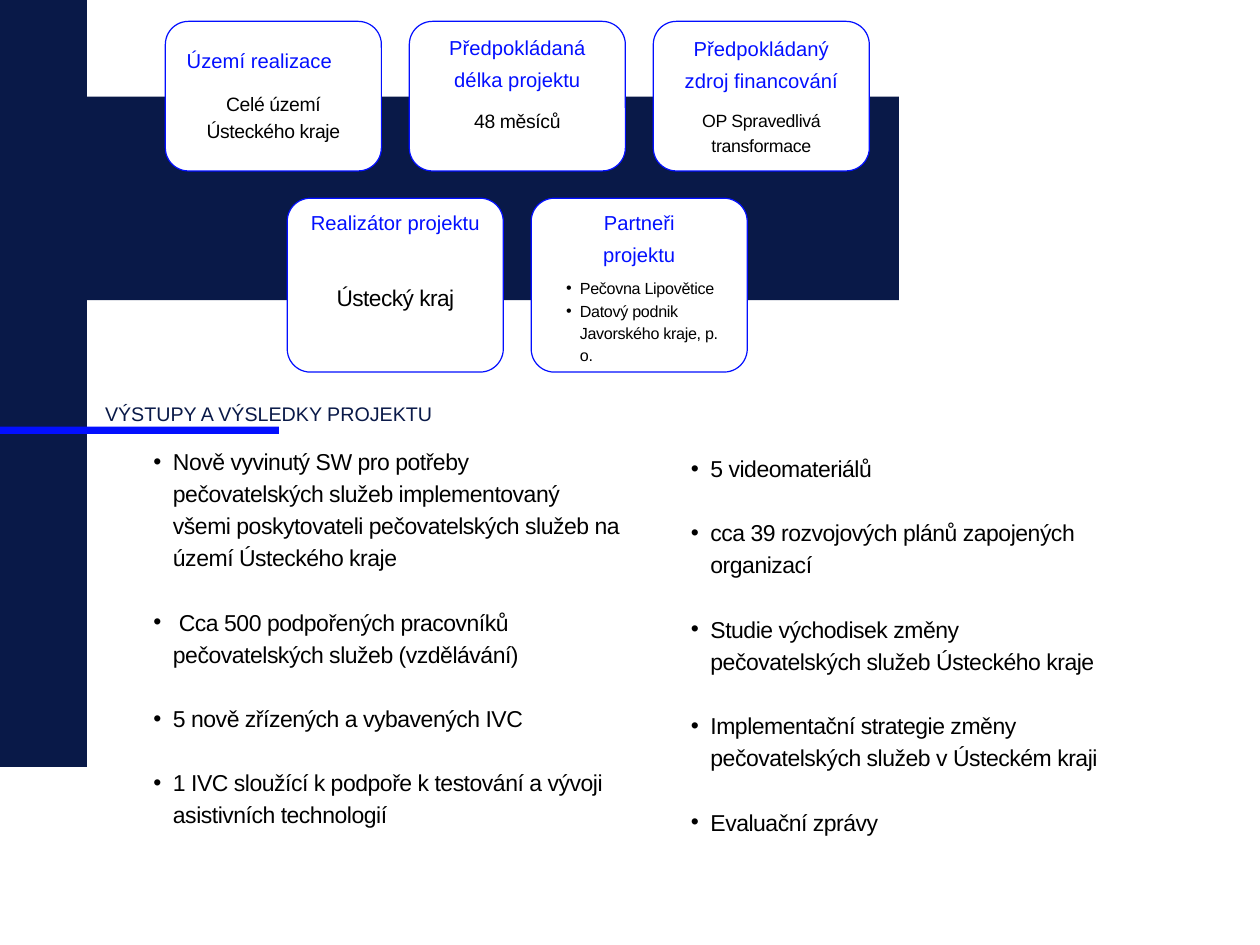
from pptx import Presentation
from pptx.util import Pt
from pptx.dml.color import RGBColor
from pptx.enum.shapes import MSO_SHAPE as Shape
from pptx.enum.text import MSO_ANCHOR as Anchor, MSO_AUTO_SIZE as Auto, PP_ALIGN as Align
from pptx.oxml.ns import qn
from lxml.etree import SubElement

NAVY = RGBColor(0x09, 0x19, 0x48)
BLUE = RGBColor(0x03, 0x0F, 0xFF)
BLACK = RGBColor(0, 0, 0)
WHITE = RGBColor(255, 255, 255)

TITLE = "VÝSTUPY A VÝSLEDKY PROJEKTU"

# Text styles: size, line height, letter spacing, bullet indent, gap between items
HEAD = dict(size=12.3, line=19.6, color=BLUE, align=Align.CENTER)
LEFT = {**HEAD, "align": Align.LEFT}
BODY = dict(size=11.8, line=16.5, spc=-0.2, align=Align.CENTER)
FUND = dict(size=10.8, line=15.1, spc=-0.2, align=Align.CENTER)
OWNER = dict(size=13.8, line=19.3, spc=-0.3, align=Align.CENTER)
PARTNER = dict(size=9.8, line=13.7, spc=-0.2, indent=(16.6, 8.4))
RESULT = dict(size=14, line=19.6, spc=-0.3, indent=(24, 12), gap=19.6)

# Rows of cards: left, top, height, cards; each card holds (top, lines, style)
ROWS = [
    (100.8, 13, 91.2, [
        [(24.5, ["Území realizace"], LEFT),
         (54, ["Celé území", "Ústeckého kraje"], BODY)],
        [(16.7, ["Předpokládaná délka projektu"], HEAD),
         (64, ["48 měsíců"], BODY)],
        [(17.2, ["Předpokládaný zdroj financování"], HEAD),
         (65, ["OP Spravedlivá transformace"], FUND)],
    ]),
    (175.1, 120.8, 106, [
        [(123.2, ["Realizátor projektu"], HEAD),
         (170, ["Ústecký kraj"], OWNER)],
        [(123.2, ["Partneři", "projektu"], HEAD),
         (167.8, ["Pečovna Lipovětice",
                  "Datový podnik Javorského kraje, p. o."], PARTNER)],
    ]),
]
CARD_W, STEP, PAD, RADIUS = 131.7, 148.7, 13, 14.1

# Result lists: left, top, width, items
LISTS = [
    (81.4, 270, 298, [
        "Nově vyvinutý SW pro potřeby pečovatelských služeb implementovaný "
        "všemi poskytovateli pečovatelských služeb na území Ústeckého kraje",
        " Cca 500 podpořených pracovníků pečovatelských služeb (vzdělávání)",
        "5 nově zřízených a vybavených IVC",
        "1 IVC sloužící k podpoře k testování a vývoji asistivních technologií",
    ]),
    (409, 274.3, 267, [
        "5 videomateriálů",
        "cca 39 rozvojových plánů zapojených organizací",
        "Studie východisek změny pečovatelských služeb Ústeckého kraje",
        "Implementační strategie změny pečovatelských služeb v Ústeckém kraji",
        "Evaluační zprávy",
    ]),
]
LIST_H = 233


def fill_text(frame, lines, size, line, color=BLACK, align=Align.LEFT,
              spc=0, indent=None, gap=0):
    frame.margin_left = frame.margin_right = 0
    frame.margin_top = frame.margin_bottom = 0
    frame.word_wrap = True
    frame.auto_size = Auto.NONE
    frame.vertical_anchor = Anchor.TOP
    for i, text in enumerate(lines):
        par = frame.add_paragraph() if i else frame.paragraphs[0]
        par.text = text
        props = par._p.get_or_add_pPr()
        if indent:
            left, hang = indent
            props.set("marL", str(Pt(left)))
            props.set("indent", str(-Pt(hang)))
            SubElement(props, qn("a:buFont")).set("typeface", "Arial")
            SubElement(props, qn("a:buChar")).set("char", "•")
        par.alignment = align
        par.line_spacing = Pt(line)
        par.space_before = Pt(gap if i else 0)
        font = par.font
        font.name, font.size = "Arial", Pt(size)
        font.color.rgb = color
        if spc:
            props.find(qn("a:defRPr")).set("spc", str(round(spc * 100)))


def add_text(x, y, w, h, lines, style):
    box = slide.shapes.add_textbox(Pt(x), Pt(y), Pt(w), Pt(h))
    fill_text(box.text_frame, lines, **style)


def add_block(kind, x, y, w, h, color):
    block = slide.shapes.add_shape(kind, Pt(x), Pt(y), Pt(w), Pt(h))
    block.shadow.inherit = False
    block.fill.solid()
    block.fill.fore_color.rgb = color
    block.line.fill.background()
    return block


def add_card(x, y, h, parts):
    card = add_block(Shape.ROUNDED_RECTANGLE, x, y, CARD_W, h, WHITE)
    card.adjustments[0] = RADIUS / min(CARD_W, h)
    card.line.color.rgb = BLUE
    card.line.width = Pt(0.75)
    for top, lines, style in parts:
        room = y + h - top
        add_text(x + PAD, top, CARD_W - 2 * PAD, room, lines, style)


deck = Presentation()
deck.slide_width, deck.slide_height = Pt(768), Pt(576)
slide = deck.slides.add_slide(deck.slide_layouts[5])

title = slide.shapes.title
title.left, title.top, title.width, title.height = Pt(64), Pt(240), Pt(222), Pt(18)
fill_text(title.text_frame, [TITLE], size=12, line=19.2, color=NAVY)

add_block(Shape.RECTANGLE, 0, 59, 548, 124, NAVY)
for left, top, height, cards in ROWS:
    for i, parts in enumerate(cards):
        add_card(left + i * STEP, top, height, parts)
add_block(Shape.RECTANGLE, 0, 0, 53, 467.5, NAVY)
for left, top, width, items in LISTS:
    add_text(left, top, width, LIST_H, items, RESULT)
add_block(Shape.RECTANGLE, 0, 260, 170, 4.5, BLUE)

deck.save("out.pptx")
